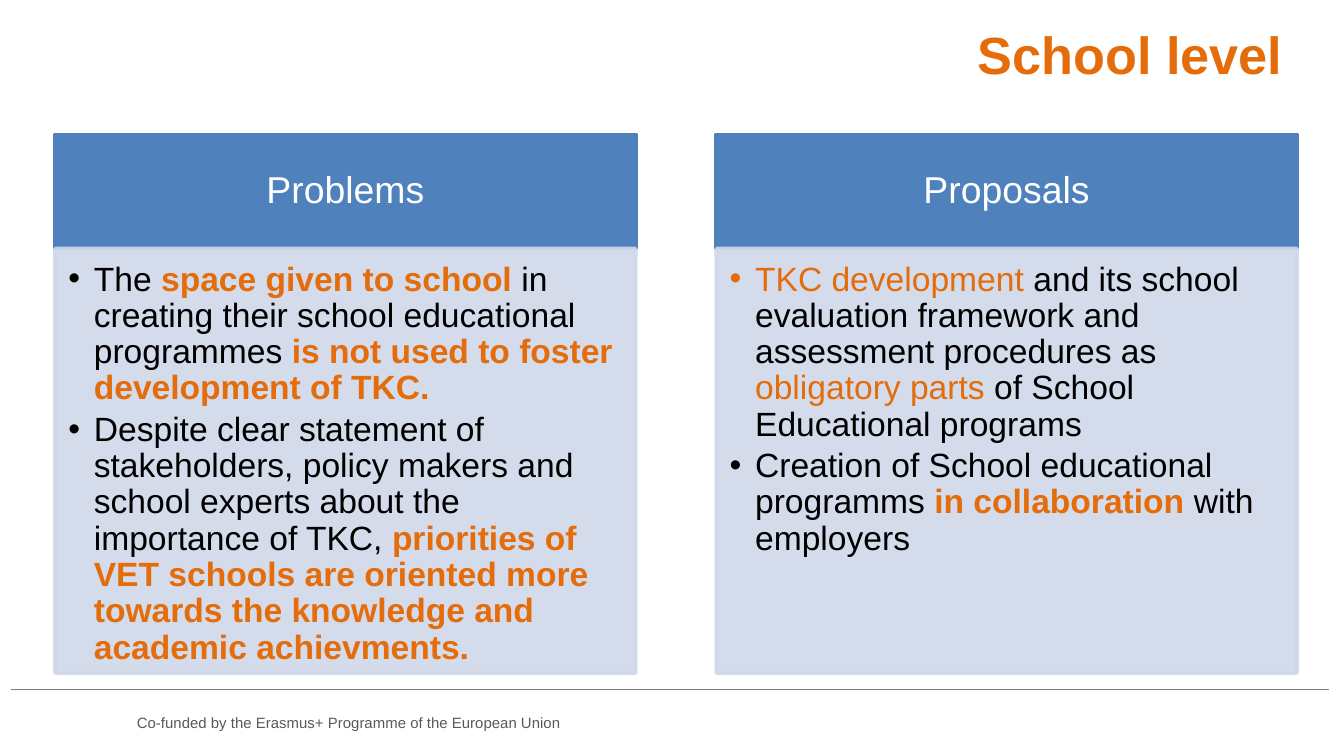
from lxml import etree
from pptx import Presentation
from pptx.dml.color import RGBColor
from pptx.enum import shapes as kinds, text as t
from pptx.oxml.ns import qn
from pptx.util import Inches, Pt

HUES = {"blue": "4F81BD", "pale": "D0D8E8", "orange": "E46C0A", "black": "000000",
        "white": "FFFFFF", "gray": "595959", "rule": "7F7F7F"}

deck = Presentation()
deck.slide_width = Inches(10)
deck.slide_height = Inches(10) * 9 // 16
slide = deck.slides.add_slide(deck.slide_layouts[6])


def style(run, size, hue, bold=False):
    run.font.name = "Arial"
    run.font.size = Pt(size)
    run.font.bold = bold
    run.font.color.rgb = RGBColor.from_string(HUES[hue])


def add_box(left, top, width, height, hue, insets):
    box = slide.shapes.add_shape(kinds.MSO_SHAPE.RECTANGLE, Inches(left), Inches(top),
                                 Inches(width), Inches(height))
    box.shadow.inherit = False
    box.fill.solid()
    box.fill.fore_color.rgb = box.line.color.rgb = RGBColor.from_string(HUES[hue])
    box.line.width = Pt(2)
    frame = box.text_frame
    frame.word_wrap = True
    (frame.margin_left, frame.margin_top,
     frame.margin_right, frame.margin_bottom) = map(Inches, insets)
    return box


rule = slide.shapes.add_connector(kinds.MSO_CONNECTOR.STRAIGHT, Inches(0.08), Inches(5.13),
                                  Inches(9.89), Inches(5.13))
rule.line.color.rgb = RGBColor.from_string(HUES["rule"])
rule.line.width = Pt(0.25)
etree.SubElement(rule.element.spPr, qn("a:effectLst"))

panels = [
    ("Problems", [
        [("The ", "black", False),
         ("space given to school ", "orange", True),
         ("in creating their school educational programmes ", "black", False),
         ("is not used to foster development of TKC.", "orange", True)],
        [("Despite clear statement of stakeholders, policy makers and school experts "
          "about the importance of TKC, ", "black", False),
         ("priorities of VET schools are oriented more towards the knowledge and "
          "academic achievments.", "orange", True)],
    ]),
    ("Proposals", [
        [("TKC development ", "orange", False),
         ("and its school evaluation framework and assessment procedures as ", "black", False),
         ("obligatory parts", "orange", False),
         (" of School Educational programs", "black", False)],
        [("Creation of School educational programms ", "black", False),
         ("in collaboration ", "orange", True),
         ("with employers", "black", False)],
    ]),
]

for col, (name, points) in enumerate(panels):
    left = 0.41 + col * 4.92

    head = add_box(left, 1, 4.32, 0.85, "blue", (0.16, 0.09, 0.16, 0.09))
    head.text_frame.vertical_anchor = t.MSO_ANCHOR.MIDDLE
    para = head.text_frame.paragraphs[0]
    para.text = name
    para.alignment = t.PP_ALIGN.CENTER
    para.line_spacing = 0.9
    style(para.runs[0], 20, "white")

    body = add_box(left, 1.85, 4.32, 3.16, "pale", (0.1, 0.1, 0.14, 0.16))
    for tint in body.element.spPr.iter(qn("a:srgbClr")):
        etree.SubElement(tint, qn("a:alpha"), val="90000")
    frame = body.text_frame
    frame.vertical_anchor = t.MSO_ANCHOR.TOP
    for row, parts in enumerate(points):
        para = frame.add_paragraph() if row else frame.paragraphs[0]
        props = para._p.get_or_add_pPr()
        props.set("marL", str(Inches(0.19)))
        props.set("indent", str(Inches(-0.19)))
        etree.SubElement(props, qn("a:buFont"), typeface="Arial")
        etree.SubElement(props, qn("a:buChar"), char="•")
        para.level = 1
        para.alignment = t.PP_ALIGN.LEFT
        para.line_spacing = 0.9
        para.space_after = Pt(2.7)
        for words, hue, bold in parts:
            run = para.add_run()
            run.text = words
            style(run, 18, hue, bold)

labels = [
    ("Co-funded by the Erasmus+ Programme of the European Union",
     (0.92, 5.26, 4.37, 0.24), 8, "gray", False, t.PP_ALIGN.LEFT),
    ("School level", (4.53, 0.12, 5.11, 0.57), 28, "orange", True, t.PP_ALIGN.RIGHT),
]
for words, place, size, hue, bold, align in labels:
    frame = slide.shapes.add_textbox(*map(Inches, place)).text_frame
    frame.word_wrap = True
    frame.text = words
    para = frame.paragraphs[0]
    para.alignment = align
    style(para.runs[0], size, hue, bold)

deck.save("out.pptx")
